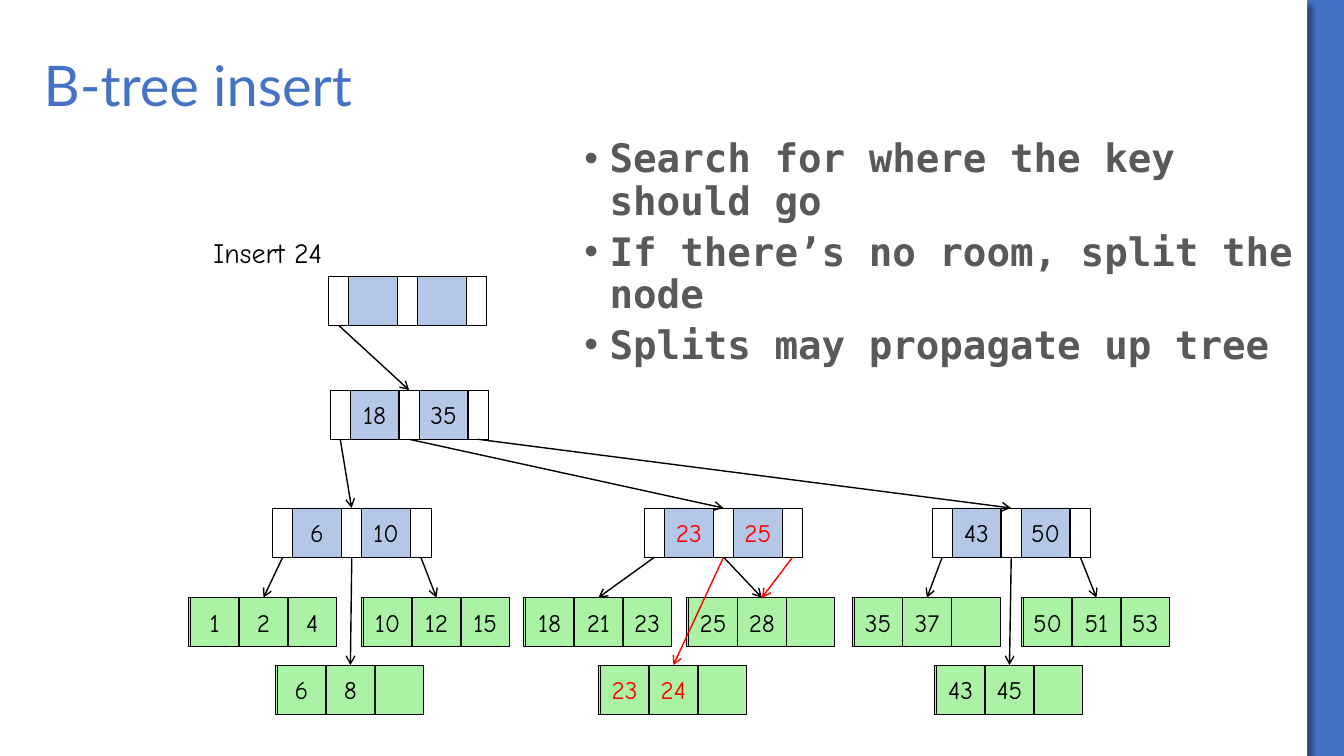
from dataclasses import dataclass

from lxml import etree
from pptx import Presentation
from pptx.dml.color import RGBColor
from pptx.enum.shapes import MSO_CONNECTOR, MSO_SHAPE
from pptx.enum.text import MSO_ANCHOR, PP_ALIGN
from pptx.oxml.ns import qn
from pptx.util import Cm, Pt

RECTANGLE = MSO_SHAPE.RECTANGLE
STRAIGHT = MSO_CONNECTOR.STRAIGHT
MIDDLE, TOP = MSO_ANCHOR.MIDDLE, MSO_ANCHOR.TOP
LEFT, CENTER = PP_ALIGN.LEFT, PP_ALIGN.CENTER


@dataclass(frozen=True)
class Theme:
    accent: str = "4472C4"
    paper: str = "FFFFFF"
    ink: str = "000000"
    body: str = "595959"
    key: str = "B4C7E7"
    leaf: str = "ABF2A5"
    changed: str = "FF0000"
    title_font: str = "Lato"
    body_font: str = "DejaVu Sans Mono"
    tree_font: str = "Comic Neue"
    title_size: int = 40
    body_size: int = 28
    label_size: int = 20
    key_size: int = 18


# Node geometry, in centimetres
NODE_H = 1.24
POINTER_W, KEY_W = 0.51, 1.22
INDEX_W, INDEX_PITCH = 3.94, 1.74
LEAF_W, LEAF_PITCH, LEAF_EDGE = 3.68, 1.23, 0.05
ROOT_Y, BRANCH_Y, INDEX_Y, LEAF_Y, LOW_LEAF_Y = 6.96, 9.83, 12.8, 15.06, 16.76


def write(frame, text, *, font, size, color, bold=False, align=LEFT,
          anchor=TOP, spacing=None, before=None, bullet=False):
    """Fill a text frame, one paragraph per line of text."""
    frame.word_wrap = True
    frame.vertical_anchor = anchor
    for number, line in enumerate(text.split("\n")):
        paragraph = frame.add_paragraph() if number else frame.paragraphs[0]
        paragraph.alignment = align
        paragraph.line_spacing = spacing
        if before is not None:
            paragraph.space_before = Pt(before)
        run = paragraph.add_run()
        run.text = line
        run.font.name, run.font.size, run.font.bold = font, Pt(size), bold
        run.font.color.rgb = RGBColor.from_string(color)
        if bullet:
            props = paragraph._p.get_or_add_pPr()
            props.set("marL", str(Cm(0.635)))
            props.set("indent", str(-Cm(0.635)))
            etree.SubElement(props, qn("a:buFont"), typeface="Arial")
            etree.SubElement(props, qn("a:buChar"), char="•")


class TreeSlide:
    def __init__(self, slide, theme):
        self.slide, self.theme = slide, theme

    def background(self, color):
        fill = self.slide.background.fill
        fill.solid()
        fill.fore_color.rgb = RGBColor.from_string(color)

    def box(self, x, y, w, h, color, outlined=True, parent=None):
        shapes = (parent or self.slide).shapes
        box = shapes.add_shape(RECTANGLE, Cm(x), Cm(y), Cm(w), Cm(h))
        box.shadow.inherit = False
        box.fill.solid()
        box.fill.fore_color.rgb = RGBColor.from_string(color)
        if outlined:
            box.line.color.rgb = RGBColor.from_string(self.theme.ink)
            box.line.width = Pt(0.5)
        else:
            box.line.fill.background()
        return box

    def page(self, w, h):
        page = self.box(0, 0, w, h, self.theme.paper, outlined=False)
        effects = page._element.spPr.find(qn("a:effectLst"))
        shadow = etree.SubElement(effects, qn("a:outerShdw"), blurRad=str(Pt(4)),
                                  dist=str(Pt(6)), dir="2700000", algn="tl")
        color = etree.SubElement(shadow, qn("a:srgbClr"), val=self.theme.ink)
        etree.SubElement(color, qn("a:alpha"), val="40000")

    def text(self, x, y, w, h, text, **style):
        area = self.slide.shapes.add_textbox(Cm(x), Cm(y), Cm(w), Cm(h))
        write(area.text_frame, text, **style)

    def cell(self, x, y, key, color, changed, parent):
        cell = self.box(x, y, KEY_W, NODE_H, color, parent=parent)
        if key:
            frame = cell.text_frame
            frame.margin_left = frame.margin_right = 0
            write(frame, key, font=self.theme.tree_font, size=self.theme.key_size,
                  color=self.theme.changed if key in changed else self.theme.ink,
                  align=CENTER, anchor=MIDDLE)

    def index(self, x, y, keys, changed=()):
        """Two keys between three pointers; returns the node's corner."""
        node = self.slide.shapes.add_group_shape()
        self.box(x, y, INDEX_W, NODE_H, self.theme.key, parent=node)
        for slot in range(3):
            self.box(x + slot * INDEX_PITCH, y, POINTER_W, NODE_H,
                     self.theme.paper, parent=node)
        for slot, key in enumerate(keys):
            self.cell(x + POINTER_W + slot * INDEX_PITCH, y, key,
                      self.theme.key, changed, node)
        return x, y

    def leaf(self, x, y, keys, changed=()):
        """Three key cells; returns the node's corner."""
        node = self.slide.shapes.add_group_shape()
        self.box(x, y, LEAF_W, NODE_H, self.theme.leaf, parent=node)
        for slot, key in enumerate(keys):
            self.cell(x + LEAF_EDGE + slot * LEAF_PITCH, y, key,
                      self.theme.leaf, changed, node)
        return x, y

    def link(self, parent, slot, child, color=None):
        """Arrow from a parent's pointer to the top middle of its child."""
        (x, y), (child_x, child_y) = parent, child
        reach = 1.99 if child_y < LEAF_Y else 1.89
        arrow = self.slide.shapes.add_connector(
            STRAIGHT, Cm(x + POINTER_W / 2 + slot * INDEX_PITCH), Cm(y + NODE_H),
            Cm(child_x + reach), Cm(child_y))
        arrow.line.color.rgb = RGBColor.from_string(color or self.theme.ink)
        arrow.line.width = Pt(1)
        etree.SubElement(arrow.line._get_or_add_ln(), qn("a:tailEnd"), type="arrow")
        etree.SubElement(arrow._element.spPr, qn("a:effectLst"))


def main():
    deck = Presentation()
    deck.slide_width, deck.slide_height = Cm(33.87), Cm(19.05)
    theme = Theme()
    tree = TreeSlide(deck.slides.add_slide(deck.slide_layouts[6]), theme)

    # Page and wording
    tree.background(theme.accent)
    tree.page(32.94, 19.05)
    tree.text(0.85, 1.27, 31.32, 1.9, "B-tree insert", font=theme.title_font,
              size=theme.title_size, color=theme.accent, anchor=MIDDLE, spacing=0.9)
    tree.text(14.48, 3.38, 18.97, 6.5,
              "Search for where the key should go\n"
              "If there’s no room, split the node\n"
              "Splits may propagate up tree",
              font=theme.body_font, size=theme.body_size, color=theme.body,
              bold=True, spacing=0.9, before=6, bullet=True)
    tree.text(5.13, 5.82, 3.78, 1.12, "Insert 24", font=theme.tree_font,
              size=theme.label_size, color=theme.ink)

    # Index nodes
    root = tree.index(8.28, ROOT_Y, ("", ""))
    branch = tree.index(8.32, BRANCH_Y, ("18", "35"))
    low = tree.index(6.87, INDEX_Y, ("6", "10"))
    split = tree.index(16.24, INDEX_Y, ("23", "25"), changed=("23", "25"))
    high = tree.index(23.49, INDEX_Y, ("43", "50"))

    # Leaves under each index node, in pointer order
    low_leaves = (tree.leaf(4.75, LEAF_Y, ("1", "2", "4")),
                  tree.leaf(6.94, LOW_LEAF_Y, ("6", "8", "")),
                  tree.leaf(9.11, LEAF_Y, ("10", "12", "15")))
    split_leaves = (tree.leaf(13.19, LEAF_Y, ("18", "21", "23")),
                    tree.leaf(17.31, LEAF_Y, ("25", "28", "")))
    high_leaves = (tree.leaf(21.47, LEAF_Y, ("35", "37", "")),
                   tree.leaf(23.55, LOW_LEAF_Y, ("43", "45", "")),
                   tree.leaf(25.74, LEAF_Y, ("50", "51", "53")))
    new_leaf = tree.leaf(15.08, LOW_LEAF_Y, ("23", "24", ""), changed=("23", "24"))

    # Pointers, then those the insert adds
    children = ((root, (branch,)), (branch, (low, split, high)), (low, low_leaves),
                (split, split_leaves), (high, high_leaves))
    for parent, nodes in children:
        for slot, child in enumerate(nodes):
            tree.link(parent, slot, child)
    tree.link(split, 2, split_leaves[1], theme.changed)
    tree.link(split, 1, new_leaf, theme.changed)

    deck.save("out.pptx")


if __name__ == "__main__":
    main()
